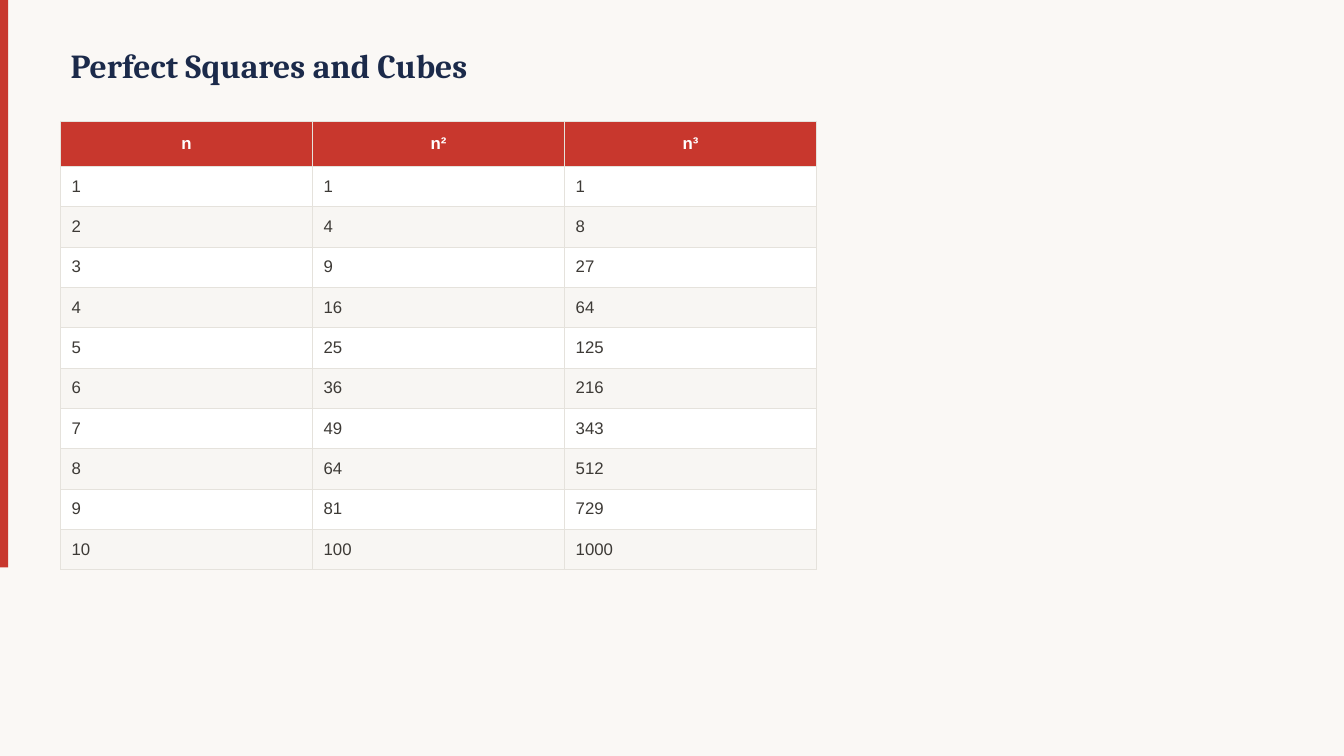
from dataclasses import dataclass

from lxml.etree import SubElement
from pptx import Presentation
from pptx.dml.color import RGBColor
from pptx.enum.shapes import MSO_SHAPE
from pptx.enum.text import MSO_ANCHOR, MSO_AUTO_SIZE, PP_ALIGN
from pptx.oxml.ns import qn
from pptx.slide import Slide
from pptx.table import _Cell
from pptx.text.text import _Paragraph
from pptx.util import Inches, Pt

COLORS = {
    "background": "FAF8F5",
    "accent": "C8372D",
    "title": "1B2A4A",
    "text": "3D3A36",
    "white": "FFFFFF",
    "band": "F8F6F3",
    "border": "E5E2DC",
}


@dataclass(frozen=True)
class TextStyle:
    font: str
    size: int
    color: str
    bold: bool = False
    align: PP_ALIGN = PP_ALIGN.LEFT


@dataclass(frozen=True)
class RowStyle:
    fill: str
    text: TextStyle


TITLE = TextStyle("Cambria", 24, "title", bold=True)
BODY = TextStyle("Arial", 12, "text")
HEADER_ROW = RowStyle("accent", TextStyle("Arial", 12, "white", True, PP_ALIGN.CENTER))
BODY_ROWS = (RowStyle("white", BODY), RowStyle("band", BODY))


def grid(units: float) -> int:
    """Length of a number of grid columns or rows, ten to the inch."""
    return Inches(units / 10)


def rgb(name: str) -> RGBColor:
    return RGBColor.from_string(COLORS[name])


def add_text(p: _Paragraph, text: str, style: TextStyle) -> None:
    p.alignment = style.align
    r = p.add_run()
    r.text = text
    r.font.name = style.font
    r.font.size = Pt(style.size)
    r.font.bold = style.bold
    r.font.color.rgb = rgb(style.color)


def add_borders(cell: _Cell) -> None:
    tc_pr = cell._tc.get_or_add_tcPr()
    for side in ("lnL", "lnR", "lnT", "lnB"):
        ln = SubElement(tc_pr, qn(f"a:{side}"), w=str(Pt(0.5)))
        fill = SubElement(ln, qn("a:solidFill"))
        SubElement(fill, qn("a:srgbClr"), val=COLORS["border"])


def fill_cell(cell: _Cell, text: str, style: RowStyle) -> None:
    add_borders(cell)
    cell.fill.solid()
    cell.fill.fore_color.rgb = rgb(style.fill)
    cell.vertical_anchor = MSO_ANCHOR.MIDDLE
    cell.margin_left = cell.margin_right = grid(1.1)
    cell.margin_top = cell.margin_bottom = grid(0.6)
    add_text(cell.text_frame.paragraphs[0], text, style.text)


def add_title(s: Slide, text: str) -> None:
    sp = s.shapes.title
    sp.left, sp.top, sp.width, sp.height = grid(6), grid(3), grid(100), grid(7)
    tf = sp.text_frame
    tf.word_wrap = True
    tf.auto_size = MSO_AUTO_SIZE.NONE
    tf.vertical_anchor = MSO_ANCHOR.MIDDLE
    add_text(tf.paragraphs[0], text, TITLE)


def add_powers_table(s: Slide, count: int) -> None:
    rows = [("n", "n²", "n³")]
    rows += [(str(n), str(n**2), str(n**3)) for n in range(1, count + 1)]
    heights = [4.5] + [4] * count
    table = s.shapes.add_table(
        len(rows), 3, grid(6), grid(12), grid(75), grid(sum(heights))
    ).table
    table.first_row = table.horz_banding = False
    for i, values in enumerate(rows):
        table.rows[i].height = grid(heights[i])
        style = BODY_ROWS[(i - 1) % 2] if i else HEADER_ROW
        for j, value in enumerate(values):
            fill_cell(table.cell(i, j), value, style)


def main() -> None:
    prs = Presentation()
    prs.slide_width, prs.slide_height = Inches(13.33), Inches(7.5)
    s = prs.slides.add_slide(prs.slide_layouts[5])

    # Background and accent bar
    s.background.fill.solid()
    s.background.fill.fore_color.rgb = rgb("background")
    bar = s.shapes.add_shape(MSO_SHAPE.RECTANGLE, 0, 0, grid(0.8), grid(56.3))
    bar.shadow.inherit = False
    bar.fill.solid()
    bar.fill.fore_color.rgb = rgb("accent")
    bar.line.fill.background()

    # Title and table
    add_title(s, "Perfect Squares and Cubes")
    add_powers_table(s, 10)

    prs.save("out.pptx")


if __name__ == "__main__":
    main()
